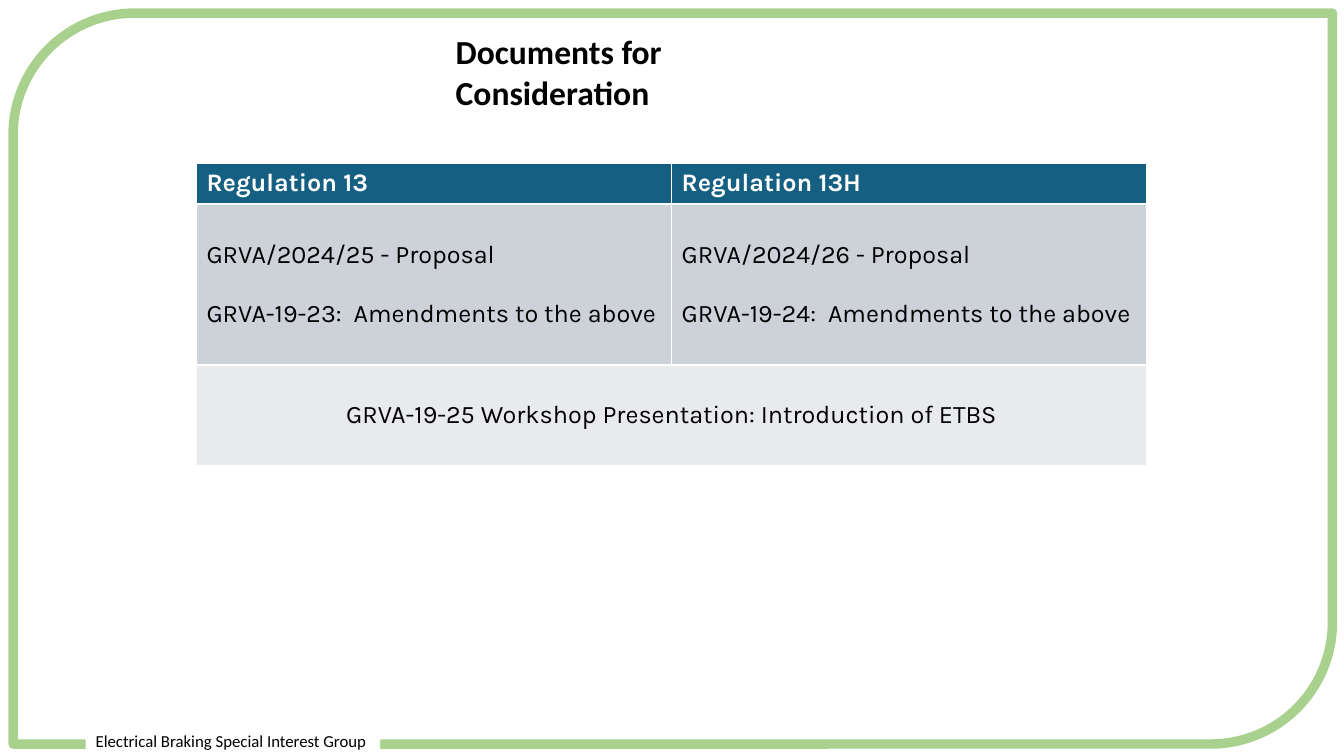
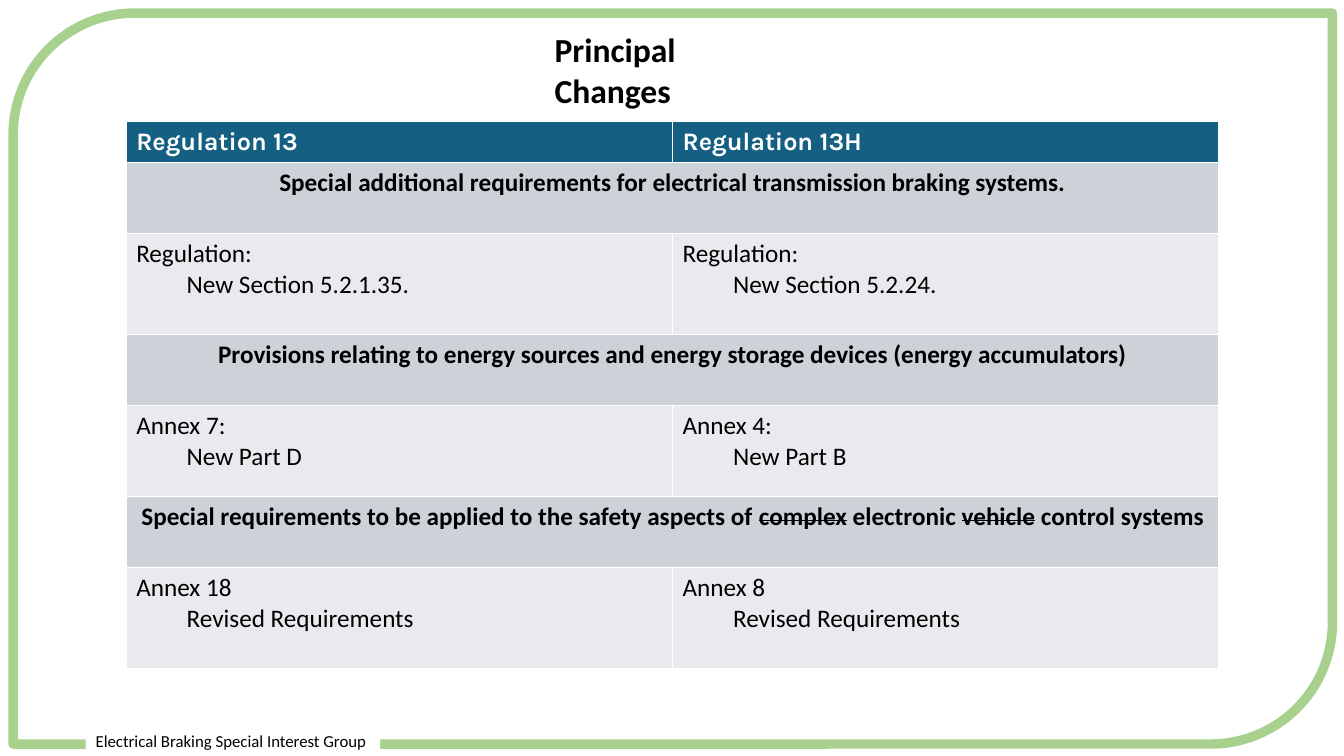
from pptx import Presentation
from pptx.dml.color import RGBColor
from pptx.enum.shapes import MSO_SHAPE
from pptx.enum.text import MSO_ANCHOR, MSO_AUTO_SIZE, PP_ALIGN
from pptx.util import Cm, Pt

BLACK = RGBColor(0x00, 0x00, 0x00)
WHITE = RGBColor(0xFF, 0xFF, 0xFF)
FRAME_GREEN = RGBColor(0xA9, 0xD1, 0x8E)
HEADER_BLUE = RGBColor(0x15, 0x60, 0x82)
BAND_DARK = RGBColor(0xCC, 0xD2, 0xD8)
BAND_LIGHT = RGBColor(0xE8, 0xEA, 0xED)

CALIBRI = "Calibri"
KARLA = "Karla"
TITLE_ONLY = 5
HEADER_HEIGHT = 1.03
FOOTER = "Electrical Braking Special Interest Group"
REGULATIONS = ["Regulation 13", "Regulation 13H"]


class Deck:
    """Holds the shared style and the slide being built."""

    def __init__(self):
        self.presentation = Presentation()
        self.presentation.slide_width = Cm(33.87)
        self.presentation.slide_height = Cm(19.05)
        self.page = None

    def add_page(self, title, left, top, width):
        layout = self.presentation.slide_layouts[TITLE_ONLY]
        self.page = self.presentation.slides.add_slide(layout)
        self.add_frame()
        self.add_footer()
        self.set_title(title, left, top, width)

    def style(self, paragraph, size, name=CALIBRI, color=BLACK, bold=False,
              align=PP_ALIGN.LEFT):
        paragraph.alignment = align
        font = paragraph.font
        font.name, font.size, font.bold = name, Pt(size), bold
        font.color.rgb = color

    def add_frame(self):
        frame = self.page.shapes.add_shape(
            MSO_SHAPE.ROUND_2_DIAG_RECTANGLE,
            Cm(0.33), Cm(0.33), Cm(33.25), Cm(18.42))
        frame.shadow.inherit = False
        frame.fill.background()
        frame.line.color.rgb = FRAME_GREEN
        frame.line.width = Pt(6.75)

    def add_footer(self):
        box = self.page.shapes.add_shape(
            MSO_SHAPE.RECTANGLE, Cm(2.16), Cm(18.29), Cm(7.42), Cm(0.76))
        box.shadow.inherit = False
        box.fill.solid()
        box.fill.fore_color.rgb = WHITE
        box.line.fill.background()
        box.text_frame.word_wrap = False
        box.text_frame.text = FOOTER
        self.style(box.text_frame.paragraphs[0], 12)

    def set_title(self, text, left, top, width):
        title = self.page.shapes.title
        title.left, title.top = Cm(left), Cm(top)
        title.width, title.height = Cm(width), Cm(2.3)
        frame = title.text_frame
        frame.word_wrap = True
        frame.auto_size = MSO_AUTO_SIZE.NONE
        frame.vertical_anchor = MSO_ANCHOR.TOP
        frame.text = text
        self.style(frame.paragraphs[0], 24, bold=True)

    def add_table(self, left, top, width, rows):
        """Add a two-column table; rows are (height, fill, cells, cell style).

        A row with a single cell spans both columns.
        """
        height = sum(row[0] for row in rows)
        table = self.page.shapes.add_table(
            len(rows), 2, Cm(left), Cm(top), Cm(width), Cm(height)).table
        table.horz_banding = False
        for column in table.columns:
            column.width = Cm(width / 2)
        for index, (row_height, fill, cells, cell_style) in enumerate(rows):
            table.rows[index].height = Cm(row_height)
            if len(cells) == 1:
                table.cell(index, 0).merge(table.cell(index, 1))
            for cell, lines in zip(table.rows[index].cells, cells):
                cell.fill.solid()
                cell.fill.fore_color.rgb = fill
                self.fill_cell(cell, lines, **cell_style)

    def fill_cell(self, cell, lines, anchor=MSO_ANCHOR.TOP, gap=0, indent=0,
                  **text_style):
        """Write one paragraph a line; gap and indent apply after the first."""
        cell.vertical_anchor = anchor
        for number, line in enumerate(lines):
            frame = cell.text_frame
            paragraph = frame.add_paragraph() if number else frame.paragraphs[0]
            if number:
                paragraph.space_before = Pt(gap)
                paragraph._p.get_or_add_pPr().set("marL", str(Cm(indent)))
            self.add_spans(paragraph, line)
            self.style(paragraph, 18, **text_style)

    def add_spans(self, paragraph, line):
        """Text between tildes is struck through."""
        for number, text in enumerate(line.split("~")):
            span = paragraph.add_run()
            span.text = text
            if number % 2:
                span._r.get_or_add_rPr().set("strike", "sngStrike")

    def save(self):
        self.presentation.save("out.pptx")


def header_row():
    return (HEADER_HEIGHT, HEADER_BLUE, [[name] for name in REGULATIONS],
            dict(name=KARLA, color=WHITE, bold=True, anchor=MSO_ANCHOR.MIDDLE))


def add_documents_page(deck):
    deck.add_page("Documents for Consideration", 11.23, 0.66, 6.6)
    body = dict(name=KARLA, anchor=MSO_ANCHOR.MIDDLE)
    proposals = [
        ["GRVA/2024/25 - Proposal", "GRVA-19-23:  Amendments to the above"],
        ["GRVA/2024/26 - Proposal", "GRVA-19-24:  Amendments to the above"],
    ]
    workshop = ["GRVA-19-25 Workshop Presentation: Introduction of ETBS"]
    deck.add_table(4.95, 4.11, 23.95, [
        header_row(),
        (4.06, BAND_DARK, proposals, dict(body, gap=21)),
        (2.54, BAND_LIGHT, [workshop], dict(body, align=PP_ALIGN.CENTER)),
    ])


def add_changes_page(deck):
    deck.add_page("Principal Changes", 13.72, 0.61, 5)
    changes = [
        ("Special additional requirements for electrical transmission "
         "braking systems.", 2.54,
         [["Regulation:", "New Section 5.2.1.35."],
          ["Regulation:", "New Section 5.2.24."]]),
        ("Provisions relating to energy sources and energy storage devices "
         "(energy accumulators)", 2.3,
         [["Annex 7:", "New Part D"], ["Annex 4:", "New Part B"]]),
        ("Special requirements to be applied to the safety aspects of "
         "~complex~ electronic ~vehicle~ control systems", 2.54,
         [["Annex 18", "Revised Requirements"],
          ["Annex 8", "Revised Requirements"]]),
    ]
    rows = [header_row()]
    for heading, height, cells in changes:
        rows.append((1.79, BAND_DARK, [[heading]],
                     dict(bold=True, align=PP_ALIGN.CENTER)))
        rows.append((height, BAND_LIGHT, cells, dict(indent=1.27)))
    deck.add_table(3.18, 3.07, 27.54, rows)


def main():
    deck = Deck()
    add_documents_page(deck)
    add_changes_page(deck)
    deck.save()


if __name__ == "__main__":
    main()
